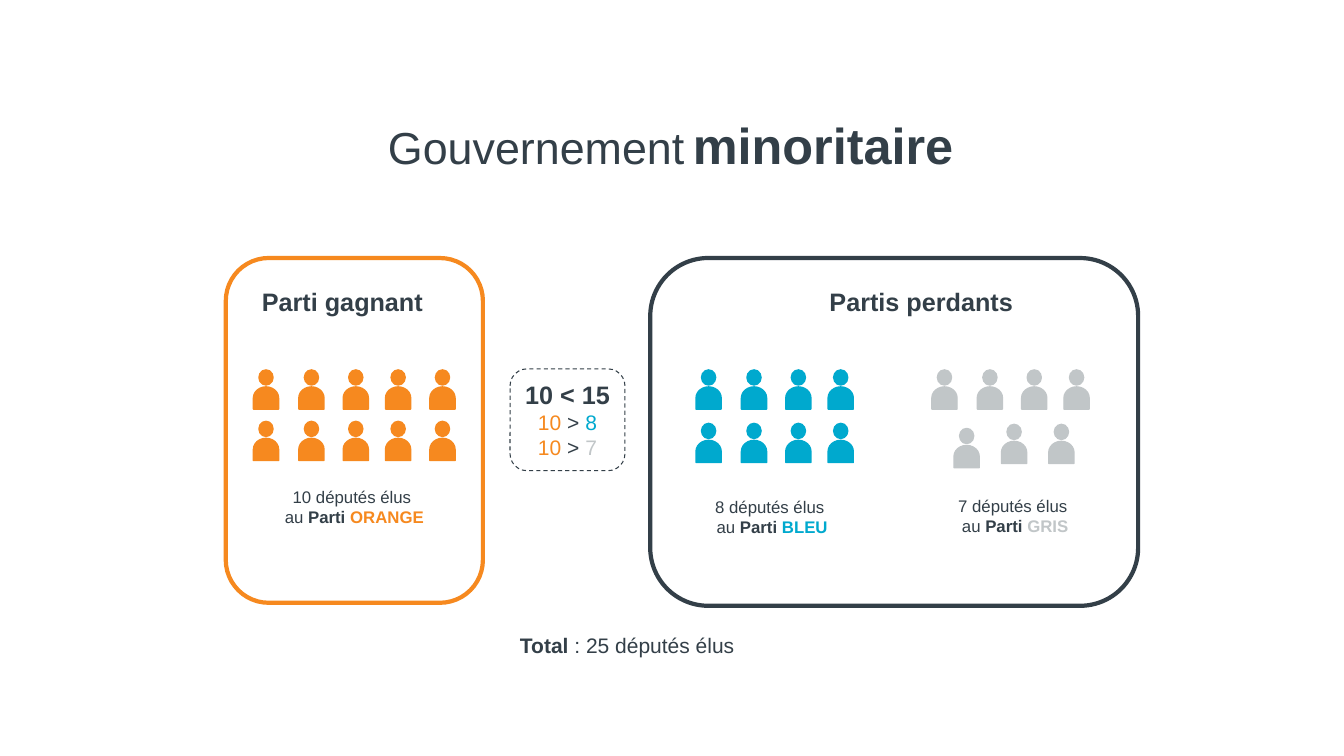
from pptx import Presentation
from pptx import util as u
from pptx.dml.color import RGBColor
from pptx.enum import dml, shapes, text

WIDTH, HEIGHT = u.Inches(13.33), u.Inches(7.5)
ORANGE = RGBColor(0xF6, 0x89, 0x1F)
BLUE = RGBColor(0x00, 0xA9, 0xCE)
GREY = RGBColor(0xC1, 0xC6, 0xC8)
SLATE = RGBColor(0x33, 0x3F, 0x48)
WHITE = RGBColor(0xFF, 0xFF, 0xFF)

FONT = "Arial"
LEFT, CENTER = text.PP_ALIGN.LEFT, text.PP_ALIGN.CENTER
ROUNDED = shapes.MSO_SHAPE.ROUNDED_RECTANGLE
BREAK = None
SEAT_COLUMNS = (0, 3.38, 6.68, 9.83, 13.13)
TOP_ROW = 48.93


def across(share):
    """Length for a percentage of the slide's width."""
    return u.Emu(round(WIDTH * share / 100))


def down(share):
    """Length for a percentage of the slide's height."""
    return u.Emu(round(HEIGHT * share / 100))


def place(left, top, width, height):
    return across(left), down(top), across(width), down(height)


def add_outline(parent, kind, area, line_color, line_width, fill=None):
    shape = parent.add_shape(kind, *place(*area))
    shape.shadow.inherit = False
    if fill is None:
        shape.fill.background()
    else:
        shape.fill.solid()
        shape.fill.fore_color.rgb = fill
    shape.line.color.rgb = line_color
    shape.line.width = u.Pt(line_width)
    return shape


def write(frame, paragraphs, align=LEFT):
    """Fill a frame with paragraphs of (text, size, bold, color) spans."""
    for index, spans in enumerate(paragraphs):
        para = frame.add_paragraph() if index else frame.paragraphs[0]
        para.alignment = align
        for span in spans:
            if span is BREAK:
                para.add_line_break()
                continue
            run = para.add_run()
            run.text, size, run.font.bold, color = span
            run.font.name = FONT
            run.font.size = u.Pt(size)
            run.font.color.rgb = color


def add_label(slide, area, spans, align=LEFT, wrap=False):
    box = slide.shapes.add_textbox(*place(*area))
    box.text_frame.word_wrap = wrap
    write(box.text_frame, [spans], align)


def caption(count, party, color):
    return [(f"{count} députés élus ", 12, False, SLATE), BREAK,
            ("au ", 12, False, SLATE), ("Parti ", 12, True, SLATE),
            (party, 12, True, color)]


def comparison(other, color):
    return [("10", 15, False, ORANGE), (" > ", 15, False, SLATE),
            (str(other), 15, False, color)]


def add_seats(slide, start, color, seats):
    """Group of people, each at (offset from start, top of the head)."""
    group = slide.shapes.add_group_shape()
    for offset, top in seats:
        middle = start + offset
        add_outline(group.shapes, shapes.MSO_SHAPE.OVAL,
                    (middle - 0.53, top, 1.05, 2), color, 1, color)
        body = add_outline(group.shapes, shapes.MSO_SHAPE.FLOWCHART_DELAY,
                           (middle - 0.83, top + 2.05, 1.65, 3.33), color, 1, color)
        body.rotation = 270


def seat_row(count, top):
    return [(column, top) for column in SEAT_COLUMNS[:count]]


def add_winner(slide):
    panel = add_outline(slide.shapes, ROUNDED, (16.8, 34.13, 19.13, 45.6),
                        ORANGE, 3, WHITE)
    frame = panel.text_frame
    frame.word_wrap = True
    frame.vertical_anchor = text.MSO_ANCHOR.BOTTOM
    frame.margin_bottom = down(8.37)
    write(frame, [caption(10, "ORANGE", ORANGE)], CENTER)
    add_label(slide, (18.75, 37.2, 13.58, 5.33),
              [("Parti gagnant", 18, True, SLATE)])
    add_seats(slide, 19.8, ORANGE, seat_row(5, TOP_ROW) + seat_row(5, 55.73))


def add_losers(slide):
    add_outline(slide.shapes, ROUNDED, (48.38, 34.13, 36.3, 46), SLATE, 3)
    add_label(slide, (60.98, 37.2, 15.3, 5.33),
              [("Partis perdants", 18, True, SLATE)])
    add_seats(slide, 52.73, BLUE, seat_row(4, TOP_ROW) + seat_row(4, 56))
    grey_lower = [(1.65, 56.67), (5.18, 56.13), (8.7, 56.13)]
    add_seats(slide, 70.28, GREY, seat_row(4, TOP_ROW) + grey_lower)
    for left, top, spans in ((38.7, 65.07, caption(8, "BLEU", BLUE)),
                             (56.78, 64.93, caption(7, "GRIS", GREY))):
        add_label(slide, (left, top, 37.5, 6.67), spans, CENTER, wrap=True)


def add_comparison(slide):
    box = add_outline(slide.shapes, ROUNDED, (37.95, 48.8, 8.55, 13.47), SLATE, 0.75)
    box.line.dash_style = dml.MSO_LINE.DASH
    box.text_frame.word_wrap = False
    box.text_frame.vertical_anchor = text.MSO_ANCHOR.MIDDLE
    write(box.text_frame,
          [[("10 < 15", 18, True, SLATE), BREAK] + comparison(8, BLUE),
           comparison(7, GREY)], CENTER)


def main():
    deck = Presentation()
    deck.slide_width, deck.slide_height = WIDTH, HEIGHT
    slide = deck.slides.add_slide(deck.slide_layouts[6])
    add_winner(slide)
    add_losers(slide)
    add_comparison(slide)
    add_label(slide, (37.95, 83.07, 19.13, 4.67),
              [("Total", 15, True, SLATE), (" : 25 députés élus", 15, False, SLATE)],
              wrap=True)
    add_label(slide, (28.13, 14.4, 43.96, 9),
              [("Gouvernement", 32, False, SLATE), (" ", 21, False, SLATE),
               ("minoritaire", 36, True, SLATE)])
    deck.save("out.pptx")


if __name__ == "__main__":
    main()
